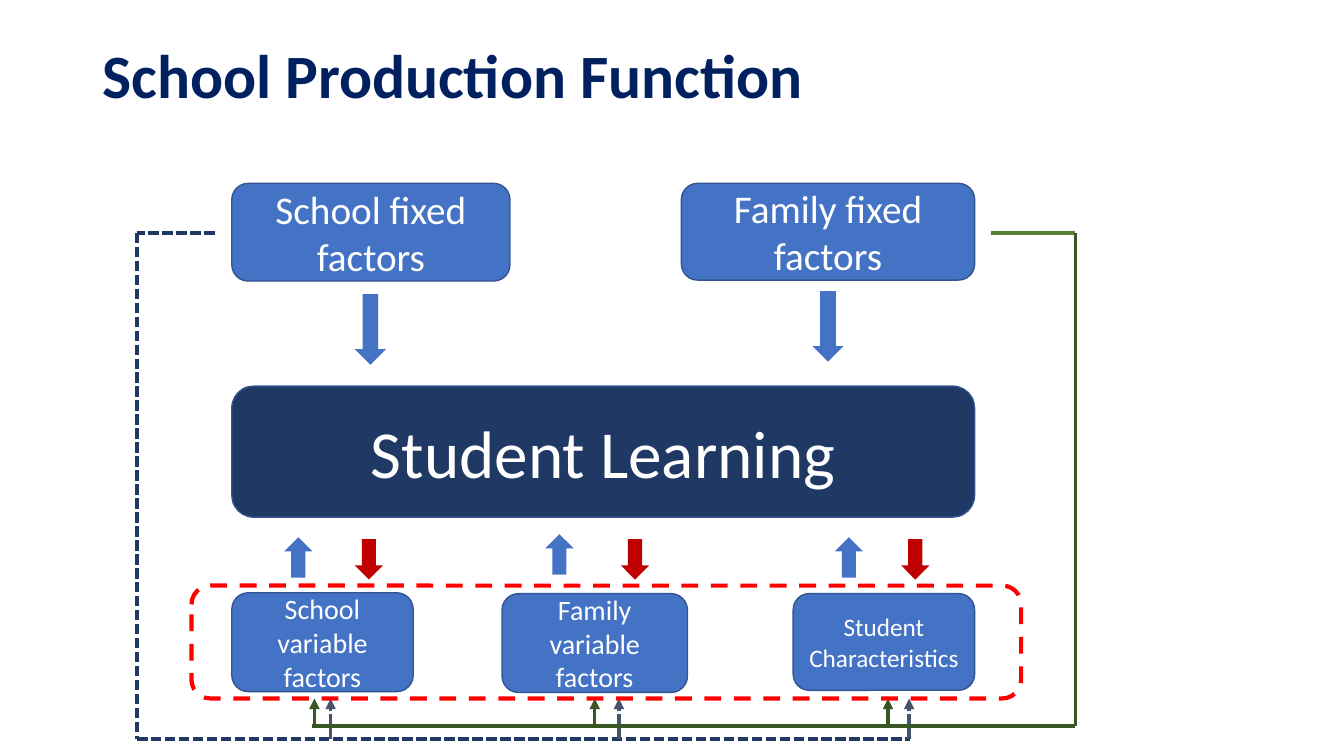
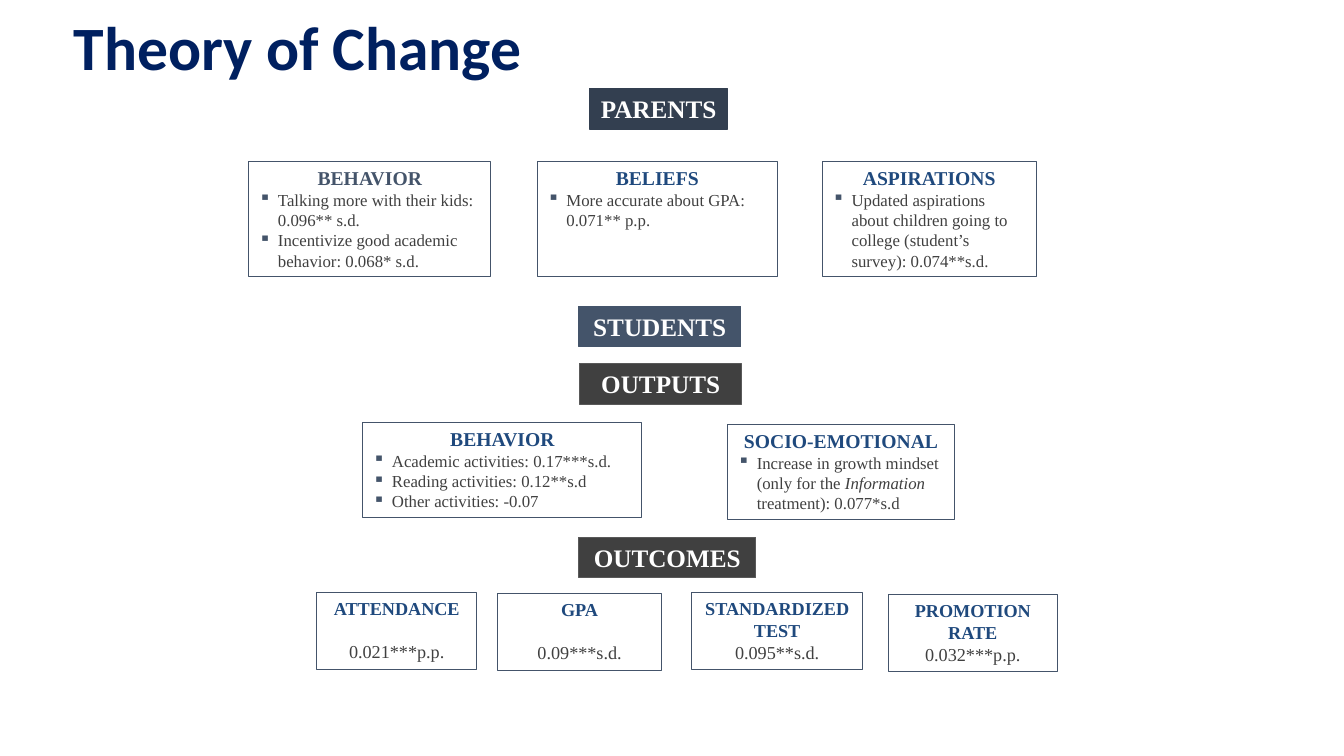
from pptx import Presentation
from pptx.util import Pt
from pptx.dml.color import RGBColor as RGB
from pptx.enum.dml import MSO_LINE as Dash
from pptx.enum.shapes import MSO_CONNECTOR as Conn, MSO_SHAPE as Kind
from pptx.enum.text import MSO_ANCHOR as Anchor, PP_ALIGN as Align
from lxml.etree import SubElement
from pptx.oxml.ns import qn

WHITE = RGB(0xFF, 0xFF, 0xFF)
TITLE = RGB(0x00, 0x20, 0x60)
NAVY = RGB(0x20, 0x38, 0x64)
BLUE = RGB(0x44, 0x72, 0xC4)
EDGE = RGB(0x32, 0x54, 0x91)
CRIMSON = RGB(0xC0, 0x00, 0x00)
RED = RGB(0xFF, 0x00, 0x00)
GREEN = RGB(0x54, 0x82, 0x35)
FOREST = RGB(0x38, 0x57, 0x23)
SLATE = RGB(0x44, 0x54, 0x6A)
DARK = RGB(0x33, 0x3F, 0x50)
HEAD = RGB(0x1F, 0x49, 0x7D)
GREY = RGB(0x40, 0x40, 0x40)
RIM = RGB(0x59, 0x59, 0x59)

SANS, SERIF = "Calibri", "Times New Roman"

FACTORS = [
    ("Student Learning", 48, NAVY, (165.6, 275.8, 530.6, 93.6)),
    ("School fixed factors", 28, BLUE, (165.6, 131, 198.7, 69.8)),
    ("Family fixed factors", 28, BLUE, (486.7, 131, 209.5, 69.1)),
    ("School variable factors", 20, BLUE, (165.6, 423.4, 129.6, 70.6)),
    ("Family variable factors", 20, BLUE, (358.6, 424, 132.5, 70.6)),
    ("Student Characteristics", 18, BLUE, (566.6, 424, 129.6, 69.1)),
]
ARROWS = [
    (Kind.DOWN_ARROW, BLUE, (22.3, 50.4), [(253.4, 210.2), (580.3, 208)]),
    (Kind.UP_ARROW, BLUE, (20.2, 28.8),
     [(203, 383.8), (389.5, 381.6), (596.2, 383.8)]),
    (Kind.DOWN_ARROW, CRIMSON, (20.2, 28.8),
     [(253.4, 385.2), (443.5, 385.2), (643.7, 385.2)]),
]
FRAME = (136.8, 418.3, 592.6, 80.6)
LOOP_TOP, TIP = 166.3, 499
FAMILY = dict(start=707.8, side=768.2, base=518.4, end=223.2,
              ticks=(224.6, 424.8, 634.3), top=GREEN, rail=FOREST,
              tick=FOREST, dash=None)
SCHOOL = dict(start=153.4, side=97.9, base=527.8, end=650.2,
              ticks=(236.2, 442.1, 649.4), top=NAVY, rail=NAVY,
              tick=SLATE, dash=Dash.SQUARE_DOT)

BANDS = [
    ("PARENTS", DARK, DARK, (421.2, 63.4, 98.6)),
    ("STUDENTS", SLATE, SLATE, (413.3, 218.9, 115.9)),
    ("OUTPUTS", GREY, RIM, (414, 259.9, 115.9)),
    ("OUTCOMES", GREY, RIM, (413.3, 383.8, 126.7)),
]
CARDS = [
    ("BEHAVIOR", SLATE, (177.8, 115.2, 172.8, 82.1),
     ["Talking more with their kids: 0.096** s.d.",
      "Incentivize good academic behavior: 0.068* s.d."]),
    ("BELIEFS", HEAD, (383.8, 115.2, 171.4, 82.1),
     ["More accurate about GPA: 0.071** p.p."]),
    ("ASPIRATIONS", HEAD, (587.5, 115.2, 152.6, 82.1),
     ["Updated aspirations about children going to college "
      "(student’s survey): 0.074**s.d."]),
    ("BEHAVIOR", HEAD, (259.2, 301.7, 199.4, 67.7),
     ["Academic activities: 0.17***s.d.", "Reading activities: 0.12**s.d",
      "Other activities: -0.07"]),
    ("SOCIO-EMOTIONAL", HEAD, (519.8, 303.1, 162, 67.7),
     ["Increase in growth mindset (only for the _Information_ "
      "treatment): 0.077*s.d"]),
]
RESULTS = [
    ("ATTENDANCE", "0.021***p.p.", 15, (226.1, 423.4, 114.5)),
    ("GPA", "0.09***s.d.", 15, (355.7, 424.1, 116.6)),
    ("STANDARDIZED TEST", "0.095**s.d.", 0, (493.9, 423.4, 122.4)),
    ("PROMOTION RATE", "0.032***p.p.", 0, (634.3, 424.8, 121)),
]


def write(shape, text, size=18, color=WHITE, font=SERIF, bold=False,
          align=Align.CENTER, bullet=None, before=0, spacing=None):
    frame = shape.text_frame
    para = frame.paragraphs[0] if not frame.text else frame.add_paragraph()
    para.alignment = align
    if bullet is not None:
        props = para._p.get_or_add_pPr()
        props.set("marL", str(Pt(13.7)))
        props.set("indent", str(-Pt(13.7)))
        tint = SubElement(props, qn("a:buClr"))
        SubElement(tint, qn("a:srgbClr")).set("val", str(bullet))
        SubElement(props, qn("a:buChar")).set("char", "▪")
    if before:
        para.space_before = Pt(before)
    if spacing:
        para.line_spacing = spacing
    for i, part in enumerate(text.split("_")):
        run = para.add_run()
        run.text = part
        face = run.font
        face.name, face.size, face.bold = font, Pt(size), bold
        face.italic = i % 2 == 1
        face.color.rgb = color


def shape(slide, kind, box, fill=None, line=None, width=1,
          anchor=Anchor.MIDDLE):
    item = slide.shapes.add_shape(kind, *map(Pt, box))
    item.shadow.inherit = False
    if fill is None:
        item.fill.background()
    else:
        item.fill.solid()
        item.fill.fore_color.rgb = fill
    if line is None:
        item.line.fill.background()
    else:
        item.line.color.rgb = line
        item.line.width = Pt(width)
    item.text_frame.word_wrap = True
    item.text_frame.vertical_anchor = anchor
    return item


def link(slide, start, end, color, dash=None, head=False):
    item = slide.shapes.add_connector(
        Conn.STRAIGHT, *map(Pt, (*start, *end)))
    item.line.color.rgb = color
    item.line.width = Pt(2.5)
    if dash:
        item.line.dash_style = dash
    if head:
        outline = item.line._get_or_add_ln()
        SubElement(outline, qn("a:tailEnd")).set("type", "triangle")
    SubElement(item._element.spPr, qn("a:effectLst"))


def loop(slide, start, side, base, end, ticks, top, rail, tick, dash):
    link(slide, (start, LOOP_TOP), (side, LOOP_TOP), top, dash)
    link(slide, (side, LOOP_TOP), (side, base), rail, dash)
    link(slide, (side, base), (end, base), rail, dash)
    for x in ticks:
        link(slide, (x, base), (x, TIP), tick, dash, head=True)


def page(deck, title, left, top):
    slide = deck.slides.add_slide(deck.slide_layouts[6])
    box = slide.shapes.add_textbox(Pt(left), Pt(top), Pt(828), Pt(56))
    box.text_frame.word_wrap = True
    write(box, title, size=44, color=TITLE, font=SANS, bold=True,
          align=Align.LEFT, spacing=0.9)
    return slide


def model(deck):
    slide = page(deck, "School Production Function", 66, 29)
    for text, size, fill, box in FACTORS:
        item = shape(slide, Kind.ROUNDED_RECTANGLE, box, fill, EDGE)
        write(item, text, size=size, font=SANS)
    for kind, fill, size, spots in ARROWS:
        for spot in spots:
            shape(slide, kind, (*spot, *size), fill)
    loop(slide, **FAMILY)
    loop(slide, **SCHOOL)
    frame = shape(slide, Kind.ROUNDED_RECTANGLE, FRAME, line=RED, width=3)
    frame.line.dash_style = Dash.DASH


def theory(deck):
    slide = page(deck, "Theory of Change", 45.5, 9)

    def panel(box, fill=WHITE, line=SLATE):
        return shape(slide, Kind.RECTANGLE, box, fill, line, 0.75, Anchor.TOP)

    for text, fill, line, spot in BANDS:
        write(panel((*spot, 28.8), fill, line), text, bold=True)
    for head, color, box, points in CARDS:
        card = panel(box)
        write(card, head, size=14, color=color, bold=True)
        for point in points:
            write(card, point, size=12, color=GREY, align=Align.LEFT,
                  bullet=SLATE)
    for head, value, gap, spot in RESULTS:
        card = panel((*spot, 54.7))
        write(card, head, size=13, color=HEAD, bold=True)
        write(card, value, size=13, color=GREY, before=gap)


def main():
    deck = Presentation()
    deck.slide_width, deck.slide_height = Pt(960), Pt(540)
    model(deck)
    theory(deck)
    deck.save("out.pptx")


if __name__ == "__main__":
    main()
